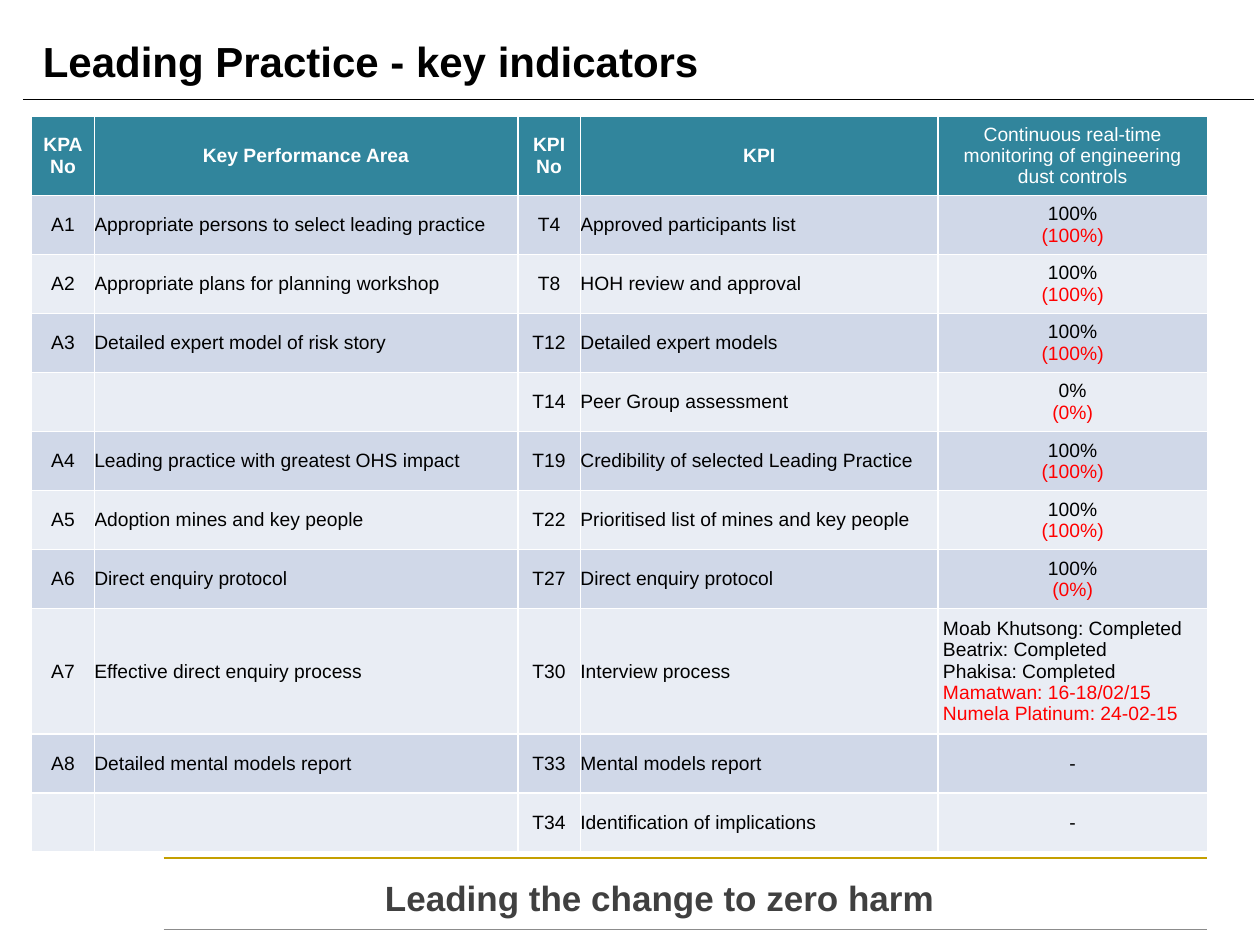
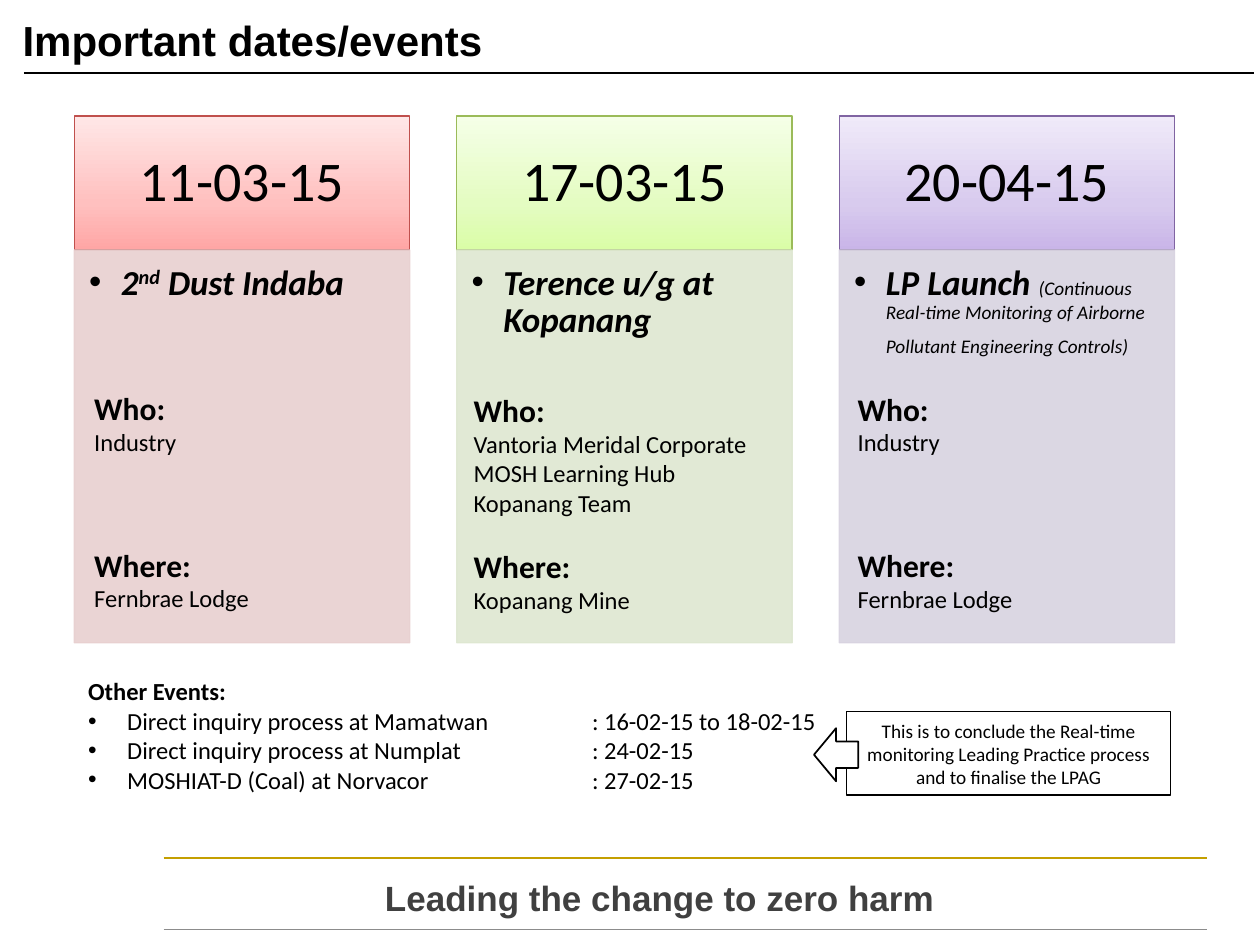
from copy import deepcopy

from lxml.etree import SubElement
from pptx import Presentation
from pptx.dml.color import RGBColor
from pptx.enum.shapes import MSO_CONNECTOR as Link, MSO_SHAPE as Preset
from pptx.enum.text import MSO_ANCHOR as Anchor, MSO_AUTO_SIZE as AutoSize, PP_ALIGN as Align
from pptx.oxml.ns import qn
from pptx.util import Cm, Pt

BLACK = RGBColor(0x00, 0x00, 0x00)
WHITE = RGBColor(0xFF, 0xFF, 0xFF)
RED = RGBColor(0xFF, 0x00, 0x00)
GOLD = RGBColor(0xC4, 0x9F, 0x00)
GREY = RGBColor(0x8C, 0x8C, 0x8C)
SLOGAN = RGBColor(0x40, 0x40, 0x40)
TEAL = RGBColor(0x31, 0x85, 0x9C)
BANDS = RGBColor(0xD0, 0xD8, 0xE8), RGBColor(0xE9, 0xED, 0xF4)
ROSE = [RGBColor(0xFF, 0xA6, 0xA5), RGBColor(0xFF, 0xC0, 0xBF), RGBColor(0xFF, 0xE7, 0xE7)]
LIME = [RGBColor(0xDA, 0xFD, 0xA7), RGBColor(0xE4, 0xFC, 0xC2), RGBColor(0xF5, 0xFF, 0xE7)]
LILAC = [RGBColor(0xC9, 0xB5, 0xE8), RGBColor(0xD8, 0xCB, 0xEE), RGBColor(0xF0, 0xEA, 0xF9)]
ROSE_EDGE, ROSE_PANEL = RGBColor(0xC0, 0x50, 0x4D), RGBColor(0xE8, 0xD0, 0xD0)
LIME_EDGE, LIME_PANEL = RGBColor(0x9B, 0xBB, 0x59), RGBColor(0xDE, 0xE7, 0xD1)
LILAC_EDGE, LILAC_PANEL = RGBColor(0x80, 0x64, 0xA2), RGBColor(0xD8, 0xD3, 0xE0)

ARIAL = {"name": "Arial"}
CALIBRI = {"name": "Calibri"}
TITLE = ARIAL | {"size": Pt(24), "bold": True}
CELL = ARIAL | {"size": Pt(11), "bold": False}
HEADING = CALIBRI | {"size": Pt(18), "bold": True}
DETAIL = CALIBRI | {"size": Pt(14), "bold": False}
EVENT = CALIBRI | {"size": Pt(20), "bold": True, "italic": True}
NOTE = CALIBRI | {"size": Pt(11), "bold": False}

COLUMN_WIDTHS = 1.26, 8.54, 1.26, 7.21, 5.43
HEADERS = ["KPA\nNo", "Key Performance Area", "KPI\nNo", "KPI",
           "Continuous real-time monitoring of engineering dust controls"]
DONE = "100%\n(100%)"
INTERVIEWS = ("Moab Khutsong: Completed\nBeatrix: Completed\nPhakisa: Completed\n"
              "Mamatwan: 16-18/02/15\nNumela Platinum: 24-02-15")
INDICATORS = [
    ("A1", "Appropriate persons to select leading practice", "T4", "Approved participants list", DONE),
    ("A2", "Appropriate plans for planning workshop", "T8", "HOH review and approval", DONE),
    ("A3", "Detailed expert model of risk story", "T12", "Detailed expert models", DONE),
    ("", "", "T14", "Peer Group assessment", "0%\n(0%)"),
    ("A4", "Leading practice with greatest OHS impact", "T19",
     "Credibility of selected Leading Practice", DONE),
    ("A5", "Adoption mines and key people", "T22", "Prioritised list of mines and key people", DONE),
    ("A6", "Direct enquiry protocol", "T27", "Direct enquiry protocol", "100%\n(0%)"),
    ("A7", "Effective direct enquiry process", "T30", "Interview process", INTERVIEWS),
    ("A8", "Detailed mental models report", "T33", "Mental models report", "-"),
    ("", "", "T34", "Identification of implications", "-"),
]
LAUNCH_NOTE = "(Continuous Real-time Monitoring of Airborne Pollutant Engineering Controls)"
EVENTS = [
    {"date": "11-03-15", "shades": ROSE, "edge": ROSE_EDGE, "panel": ROSE_PANEL,
     "spans": [("2", EVENT, 0), ("nd", EVENT, 30000), (" Dust Indaba", EVENT, 0)],
     "corner": (1.65, 7.72), "who": ["Industry"], "where": "Fernbrae Lodge"},
    {"date": "17-03-15", "shades": LIME, "edge": LIME_EDGE, "panel": LIME_PANEL,
     "spans": [("Terence u/g at Kopanang", EVENT, 0)], "corner": (9.3, 7.76),
     "who": ["Vantoria Meridal Corporate", "MOSH Learning Hub", "Kopanang Team"],
     "where": "Kopanang Mine"},
    {"date": "20-04-15", "shades": LILAC, "edge": LILAC_EDGE, "panel": LILAC_PANEL,
     "spans": [("LP Launch ", EVENT, 0), (LAUNCH_NOTE, NOTE | {"italic": True}, 0), (" ", EVENT, 0)],
     "corner": (17.04, 7.73), "who": ["Industry"], "where": "Fernbrae Lodge"},
]
OTHER_EVENTS = [
    "Direct inquiry process at Mamatwan\t: 16-02-15 to 18-02-15",
    "Direct inquiry process at Numplat\t: 24-02-15",
    "MOSHIAT-D (Coal) at Norvacor\t: 27-02-15",
]


def apply(target, values):
    """Set every attribute named in a dict of format values."""
    for name, value in values.items():
        setattr(target, name, value)


def place(shape, left, top, width, height):
    """Move and size a shape in centimetres."""
    apply(shape, {"left": Cm(left), "top": Cm(top), "width": Cm(width), "height": Cm(height)})


def add_span(para, text, look, color=BLACK):
    """Add one formatted run to a paragraph."""
    span = para.add_run()
    span.text = text
    apply(span.font, look)
    span.font.color.rgb = color
    return span


def add_para(frame, text="", look=DETAIL, color=BLACK, **values):
    """Add a paragraph, using the first one while it is still empty."""
    para = frame.paragraphs[0]
    if para.runs:
        para = frame.add_paragraph()
    apply(para, values)
    if text:
        add_span(para, text, look, color)
    return para


def set_bullet(para, indent, symbol="•"):
    """Give a paragraph a hanging bullet, or none without a symbol."""
    settings = para._p.get_or_add_pPr()
    settings.set("marL", str(Cm(indent)))
    settings.set("indent", str(-Cm(indent)))
    if symbol:
        SubElement(settings, qn("a:buFont"), typeface="Arial")
        SubElement(settings, qn("a:buChar"), char=symbol)
    else:
        SubElement(settings, qn("a:buNone"))


def set_margins(holder, left, top, right, bottom):
    """Set the inner margins of a cell or text frame in centimetres."""
    apply(holder, {"margin_left": Cm(left), "margin_top": Cm(top),
                   "margin_right": Cm(right), "margin_bottom": Cm(bottom)})


def add_rule(page, left, right, top, color=BLACK, weight=0.75):
    """Draw a horizontal line."""
    rule = page.shapes.add_connector(Link.STRAIGHT, Cm(left), Cm(top), Cm(right), Cm(top))
    rule.line.color.rgb = color
    rule.line.width = Pt(weight)
    SubElement(rule._element.spPr, qn("a:effectLst"))


def add_box(page, left, top, width, height):
    """Add a wrapping text box and return its frame."""
    frame = page.shapes.add_textbox(Cm(left), Cm(top), Cm(width), Cm(height)).text_frame
    frame.word_wrap = True
    return frame


def add_block(page, preset, bounds, edge, weight=0.75, fill=None):
    """Add an outlined preset shape without shadow."""
    block = page.shapes.add_shape(preset, *map(Cm, bounds))
    block.shadow.inherit = False
    block.line.color.rgb = edge
    block.line.width = Pt(weight)
    if fill is None:
        block.fill.background()
    else:
        block.fill.solid()
        block.fill.fore_color.rgb = fill
    return block


def add_page(deck, layout, title, left, top, rule_top):
    """Add a slide with its title, title rule and slogan footer."""
    page = deck.slides.add_slide(deck.slide_layouts[layout])
    place(page.shapes.title, left, top, 25, 1.6)
    frame = page.shapes.title.text_frame
    apply(frame, {"vertical_anchor": Anchor.MIDDLE, "auto_size": AutoSize.NONE})
    add_para(frame, title, TITLE, alignment=Align.LEFT)
    add_rule(page, left - 0.15 if top else 0.48, 25.27, rule_top)
    add_rule(page, 3.3, 24.33, 17.3, GOLD, 1.25)
    add_rule(page, 3.3, 24.33, 18.74, GREY)
    slogan = add_box(page, 4.17, 17.55, 18.26, 1)
    add_para(slogan, "Leading the change to zero harm", TITLE | {"size": Pt(20)}, SLOGAN,
             alignment=Align.CENTER)
    return page


def fill_cell(cell, text, fill, margin, align, look, color):
    """Fill a table cell, with outstanding results in red."""
    cell.fill.solid()
    cell.fill.fore_color.rgb = fill
    cell.vertical_anchor = Anchor.MIDDLE
    set_margins(cell, *[margin] * 4)
    for line in text.split("\n"):
        pending = line.startswith(("(", "Mamatwan", "Numela"))
        add_para(cell.text_frame, line, look, RED if pending else color, alignment=align)


def add_indicator_table(page):
    """Add the table of key performance indicators."""
    table = page.shapes.add_table(len(INDICATORS) + 1, len(HEADERS), Cm(0.64), Cm(2.34),
                                  Cm(sum(COLUMN_WIDTHS)), Cm(14.5)).table
    for column, width in zip(table.columns, COLUMN_WIDTHS):
        column.width = Cm(width)
    table.rows[0].height = Cm(1.46)
    for cell, text in zip(table.rows[0].cells, HEADERS):
        look = CELL | {"bold": text != HEADERS[-1]}
        fill_cell(cell, text, TEAL, 0.1, Align.CENTER, look, WHITE)
    for number, values in enumerate(INDICATORS):
        row = table.rows[number + 1]
        row.height = Cm(2.36 if INTERVIEWS in values else 1.19)
        for index, (cell, text) in enumerate(zip(row.cells, values)):
            align = Align.LEFT if index in (1, 3) or text == INTERVIEWS else Align.CENTER
            fill_cell(cell, text, BANDS[number % 2], 0.1 if index == 4 else 0, align, CELL, BLACK)


def add_date_header(page, left, event):
    """Add the shaded block that carries the date."""
    block = add_block(page, Preset.RECTANGLE, (left, 2.34, 6.76, 2.7), event["edge"])
    block.fill.gradient()
    block.fill.gradient_angle = 90
    stops = block._element.xpath(".//a:gsLst")[0]
    stops.append(deepcopy(stops[-1]))
    for stop, shade, position in zip(block.fill.gradient_stops, event["shades"], (0, 0.35, 1)):
        stop.color.rgb = shade
        stop.position = position
    block.text_frame.vertical_anchor = Anchor.MIDDLE
    add_para(block.text_frame, event["date"], CALIBRI | {"size": Pt(32)},
             alignment=Align.CENTER, line_spacing=0.9)


def add_event_panel(page, left, event):
    """Add the translucent panel that names the event."""
    panel = add_block(page, Preset.RECTANGLE, (left, 5.04, 6.76, 7.92), event["panel"],
                      fill=event["panel"])
    for color in panel._element.spPr.xpath(".//a:srgbClr"):
        SubElement(color, qn("a:alpha"), val="90000")
    frame = panel.text_frame
    frame.vertical_anchor = Anchor.TOP
    set_margins(frame, 0.3, 0.3, 0.4, 0.43)
    para = add_para(frame, alignment=Align.LEFT, line_spacing=0.9)
    set_bullet(para, 0.64)
    for text, look, raised in event["spans"]:
        span = add_span(para, text, look)
        if raised:
            span._r.get_or_add_rPr().set("baseline", str(raised))


def add_event_details(page, event):
    """Add who attends and where, with both headings level across events."""
    frame = add_box(page, *event["corner"], 6.53, 4.95)
    add_para(frame, "Who:", HEADING)
    for name in event["who"]:
        add_para(frame, name)
    add_para(frame, "Where:", HEADING, space_before=Pt(17 * (4 - len(event["who"]))))
    add_para(frame, event["where"])


def add_other_events(page):
    """List the other events in the body placeholder with dates on a tab stop."""
    body = page.placeholders[1]
    place(body, 1.52, 13.51, 15.7, 2.64)
    frame = body.text_frame
    frame.auto_size = AutoSize.NONE
    heading = add_para(frame, "Other Events:", DETAIL | {"bold": True}, space_before=Pt(0))
    set_bullet(heading, 0, symbol="")
    for text in OTHER_EVENTS:
        para = add_para(frame, text, space_before=Pt(0))
        set_bullet(para, 0.79)
        tabs = SubElement(para._p.pPr, qn("a:tabLst"))
        SubElement(tabs, qn("a:tab"), pos=str(Cm(10.16)), algn="l")


def add_callout(page):
    """Add the remark with its arrow towards the other events."""
    remark = add_block(page, Preset.RECTANGLE, (17.07, 14.35, 6.53, 1.68), BLACK)
    add_para(remark.text_frame, "This is to conclude the Real-time monitoring Leading Practice "
             "process and to finalise the LPAG", NOTE, alignment=Align.CENTER)
    add_block(page, Preset.LEFT_ARROW, (16.41, 14.68, 0.89, 1.07), BLACK, 1, WHITE)


def main():
    """Build and save the deck."""
    deck = Presentation()
    deck.slide_width, deck.slide_height = Cm(25.4), Cm(19.05)
    add_indicator_table(add_page(deck, 5, "Leading Practice - key indicators", 0.61, 0.43, 2.01))
    page = add_page(deck, 1, "Important dates/events", 0.2, 0, 1.47)
    for index, event in enumerate(EVENTS):
        left = 1.5 + 7.71 * index
        add_date_header(page, left, event)
        add_event_panel(page, left, event)
        add_event_details(page, event)
    add_other_events(page)
    add_callout(page)
    deck.save("out.pptx")


if __name__ == "__main__":
    main()
